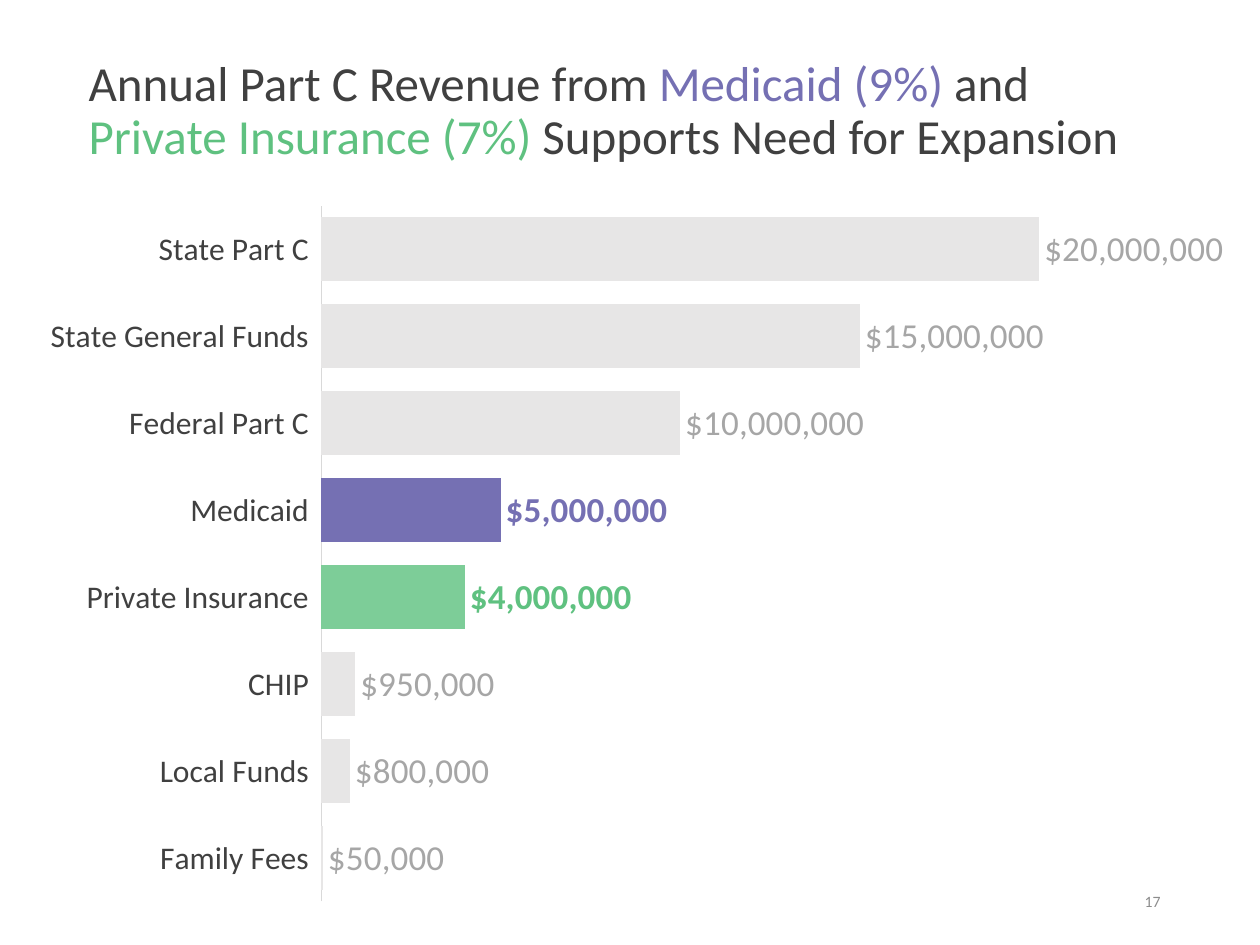
from dataclasses import dataclass

from lxml.etree import SubElement
from pptx import Presentation
from pptx.chart.data import CategoryChartData
from pptx.dml.color import RGBColor
from pptx.enum.chart import XL_CHART_TYPE, XL_LABEL_POSITION, XL_TICK_LABEL_POSITION, XL_TICK_MARK
from pptx.enum.text import MSO_ANCHOR, PP_ALIGN
from pptx.oxml.ns import qn
from pptx.util import Emu, Pt

PX = 914400 / 126


@dataclass(frozen=True)
class Theme:
    font: str = "Calibri"
    text: str = "404040"
    medicaid: str = "7570B3"
    insurance: str = "5FC180"
    insurance_bar: str = "7DCD98"
    bar: str = "E7E6E6"
    label: str = "A6A6A6"
    axis: str = "D9D9D9"
    number: str = "8C8C8C"
    title_size: int = 28
    label_size: int = 20
    category_size: int = 18
    number_size: int = 9


THEME = Theme()
TITLE = [
    ("Annual Part C Revenue from ", THEME.text),
    ("Medicaid (9%)", THEME.medicaid),
    (" and ", THEME.text),
    ("Private Insurance (7%) ", THEME.insurance),
    ("Supports Need for Expansion", THEME.text),
]
REVENUE = {
    "Family Fees": 50000,
    "Local Funds": 800000,
    "CHIP": 950000,
    "Private Insurance": 4000000,
    "Medicaid": 5000000,
    "Federal Part C": 10000000,
    "State General Funds": 15000000,
    "State Part C": 20000000,
}
# Bar colour and label colour of the sources named in the title
HIGHLIGHTS = {
    "Private Insurance": (THEME.insurance_bar, THEME.insurance),
    "Medicaid": (THEME.medicaid, THEME.medicaid),
}
DOLLARS = '"$"#,##0'


def px(*lengths):
    return [Emu(round(length * PX)) for length in lengths]


def set_values(target, values):
    for name, value in values.items():
        setattr(target, name, value)


def format_font(font, size, color, bold=False):
    set_values(font, {"name": THEME.font, "size": Pt(size), "bold": bold})
    font.color.rgb = RGBColor.from_string(color)


def fill_solid(fill, color):
    fill.solid()
    fill.fore_color.rgb = RGBColor.from_string(color)


def add_title(slide, box):
    title = slide.shapes.title
    set_values(title, dict(zip(("left", "top", "width", "height"), px(*box))))
    title.text_frame.vertical_anchor = MSO_ANCHOR.MIDDLE
    paragraph = title.text_frame.paragraphs[0]
    set_values(paragraph, {"alignment": PP_ALIGN.LEFT, "line_spacing": 0.9})
    for text, color in TITLE:
        run = paragraph.add_run()
        run.text = text
        format_font(run.font, THEME.title_size, color)


def set_plot_layout(chart, **fractions):
    plot_area = chart._chartSpace.chart.plotArea
    for old in plot_area.findall(qn("c:layout")):
        plot_area.remove(old)
    layout = SubElement(plot_area, qn("c:layout"))
    plot_area.insert(0, layout)
    manual = SubElement(layout, qn("c:manualLayout"))
    settings = {"layoutTarget": "inner", "xMode": "edge", "yMode": "edge", **fractions}
    for name, value in settings.items():
        SubElement(manual, qn(f"c:{name}")).set("val", str(value))


def add_revenue_chart(slide, box):
    data = CategoryChartData(number_format=DOLLARS)
    data.categories = list(REVENUE)
    data.add_series("Series 1", list(REVENUE.values()))
    chart = slide.shapes.add_chart(XL_CHART_TYPE.BAR_CLUSTERED, *px(*box), data).chart
    set_values(chart, {"has_legend": False, "has_title": False})
    format_font(chart.font, THEME.category_size, THEME.text)
    set_plot_layout(chart, x=0.24, y=0, w=0.75, h=1)

    # Axes
    category_axis = chart.category_axis
    set_values(category_axis, {
        "major_tick_mark": XL_TICK_MARK.NONE,
        "minor_tick_mark": XL_TICK_MARK.NONE,
        "tick_label_position": XL_TICK_LABEL_POSITION.LOW,
        "has_major_gridlines": False,
    })
    format_font(category_axis.tick_labels.font, THEME.category_size, THEME.text)
    line = category_axis.format.line
    line.width = Pt(0.75)
    line.color.rgb = RGBColor.from_string(THEME.axis)
    set_values(chart.value_axis, {
        "visible": False,
        "has_major_gridlines": False,
        "minimum_scale": 0,
        "maximum_scale": 25000000,
    })

    # Bars and value labels
    plot = chart.plots[0]
    set_values(plot, {"gap_width": 35, "overlap": 100, "vary_by_categories": False})
    series = plot.series[0]
    fill_solid(series.format.fill, THEME.bar)
    labels = series.data_labels
    set_values(labels, {
        "show_value": True,
        "number_format": DOLLARS,
        "number_format_is_linked": False,
        "position": XL_LABEL_POSITION.OUTSIDE_END,
    })
    format_font(labels.font, THEME.label_size, THEME.label)

    # Highlighted sources
    for index, source in enumerate(REVENUE):
        if source in HIGHLIGHTS:
            bar_color, label_color = HIGHLIGHTS[source]
            point = series.points[index]
            fill_solid(point.format.fill, bar_color)
            format_font(point.data_label.font, THEME.label_size, label_color, bold=True)
            point.data_label.position = XL_LABEL_POSITION.OUTSIDE_END


def add_slide_number(slide, box, number):
    frame = slide.shapes.add_textbox(*px(*box)).text_frame
    set_values(frame, {"word_wrap": True, "vertical_anchor": MSO_ANCHOR.MIDDLE})
    paragraph = frame.paragraphs[0]
    paragraph.alignment = PP_ALIGN.RIGHT
    run = paragraph.add_run()
    run.text = str(number)
    format_font(run.font, THEME.number_size, THEME.number)


def main():
    presentation = Presentation()
    presentation.slide_width, presentation.slide_height = px(1260, 945)
    slide = presentation.slides.add_slide(presentation.slide_layouts[5])
    add_title(slide, (76, 32, 1097, 160))
    add_revenue_chart(slide, (34, 205, 1197, 697))
    add_slide_number(slide, (890, 876, 283, 50), 17)
    presentation.save("out.pptx")


if __name__ == "__main__":
    main()
